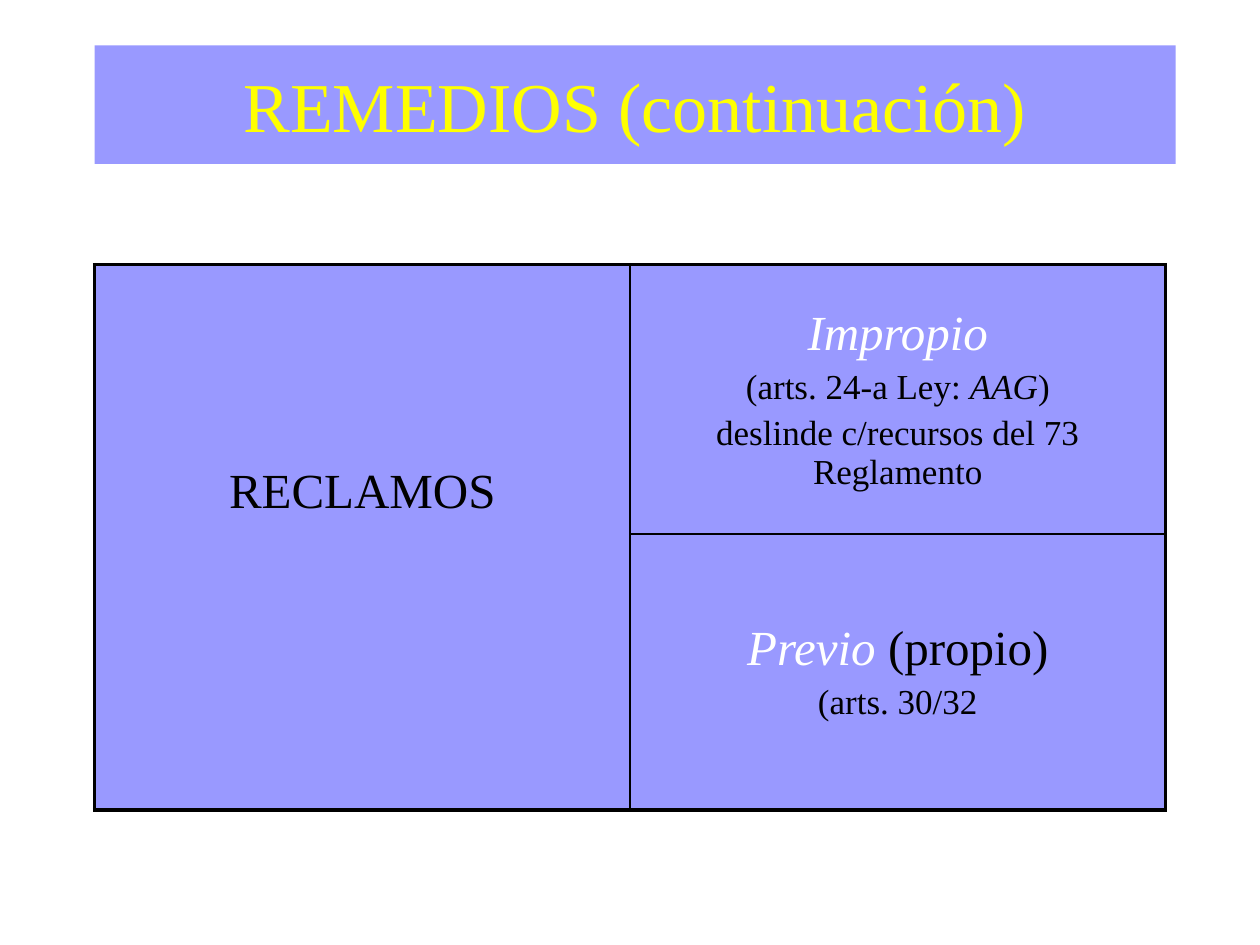
"""Build the slide on remedies: a title band and a table of claims."""
import lxml.etree
import pptx
import pptx.dml.color
import pptx.enum.text
import pptx.oxml.ns
import pptx.util

Inches = pptx.util.Inches
Pt = pptx.util.Pt
FONT = "Times New Roman"
LILAC, YELLOW, WHITE, BLACK = "9999FF", "FFFF00", "FFFFFF", "000000"
THICK, THIN = 2.25, 1
CENTER = pptx.enum.text.PP_ALIGN.CENTER
MIDDLE = pptx.enum.text.MSO_ANCHOR.MIDDLE
TOP = pptx.enum.text.MSO_ANCHOR.TOP


def color(value):
    """Turn a hex string into a colour."""
    return pptx.dml.color.RGBColor.from_string(value)


def paint(target):
    """Fill a shape or cell with the slide's lilac."""
    target.fill.solid()
    target.fill.fore_color.rgb = color(LILAC)


def write_paragraph(para, size, spans, before=0):
    """Write centred spans of (text, colour, italic) into a paragraph."""
    para.alignment = CENTER
    para.space_before = Pt(before)
    para.font.size = Pt(size)
    para.font.name = FONT
    for text, hue, italic in spans:
        span = para.add_run()
        span.text = text
        span.font.size = Pt(size)
        span.font.name = FONT
        span.font.color.rgb = color(hue)
        span.font.italic = italic


def add_title(page, text):
    """Place and format the title band."""
    title = page.shapes.title
    title.left, title.top = Inches(0.75), Inches(0.36)
    title.width, title.height = Inches(8.58), Inches(0.94)
    paint(title)
    title.text_frame.vertical_anchor = MIDDLE
    write_paragraph(title.text_frame.paragraphs[0], 40, [(text, YELLOW, False)])


def set_borders(cell, **widths):
    """Draw black borders of the given point widths on the sides L, R, T, B."""
    properties = cell._tc.get_or_add_tcPr()
    for side in "LRTB":
        if side in widths:
            line = lxml.etree.SubElement(
                properties, pptx.oxml.ns.qn(f"a:ln{side}"), w=str(Pt(widths[side])))
            fill = lxml.etree.SubElement(line, pptx.oxml.ns.qn("a:solidFill"))
            lxml.etree.SubElement(fill, pptx.oxml.ns.qn("a:srgbClr"), val=BLACK)


def fill_cell(cell, paragraphs, anchor=MIDDLE):
    """Paint a cell and write its paragraphs of (size, spans)."""
    paint(cell)
    cell.vertical_anchor = anchor
    frame = cell.text_frame
    for index, (size, spans) in enumerate(paragraphs):
        para = frame.add_paragraph() if index else frame.paragraphs[0]
        write_paragraph(para, size, spans, size * 0.2 if index else 0)


def add_claims_table(page):
    """Add the table of claims, with its left column merged."""
    table = page.shapes.add_table(
        2, 2, Inches(0.75), Inches(2.1), Inches(8.5), Inches(4.33)).table
    table.first_row = table.horz_banding = False
    for row, height in zip(table.rows, (2.14, 2.19)):
        row.height = Inches(height)
    claims, improper = table.cell(0, 0), table.cell(0, 1)
    lower_claims, prior = table.cell(1, 0), table.cell(1, 1)
    claims.merge(lower_claims)

    set_borders(claims, L=THICK, R=THIN, T=THICK, B=THICK)
    set_borders(lower_claims, L=THICK, R=THIN, B=THICK)
    set_borders(improper, L=THIN, R=THICK, T=THICK, B=THIN)
    set_borders(prior, L=THIN, R=THICK, T=THIN, B=THICK)

    claims.margin_top = Inches(1.59)
    fill_cell(claims, [(28, [("RECLAMOS", BLACK, False)])], TOP)
    paint(lower_claims)
    fill_cell(improper, [
        (28, [("Impropio", WHITE, True)]),
        (20, [("(arts. 24-a Ley: ", BLACK, False), ("AAG", BLACK, True),
              (")", BLACK, False)]),
        (20, [("deslinde c/recursos del 73 Reglamento", BLACK, False)]),
    ])
    fill_cell(prior, [
        (28, [("Previo", WHITE, True), (" (propio)", BLACK, False)]),
        (20, [("(arts. 30/32", BLACK, False)]),
    ])


def main():
    """Build and save the deck."""
    deck = pptx.Presentation()
    deck.slide_width, deck.slide_height = Inches(10), Inches(7.5)
    page = deck.slides.add_slide(deck.slide_layouts[5])
    add_title(page, "REMEDIOS (continuación)")
    add_claims_table(page)
    deck.save("out.pptx")


if __name__ == "__main__":
    main()
